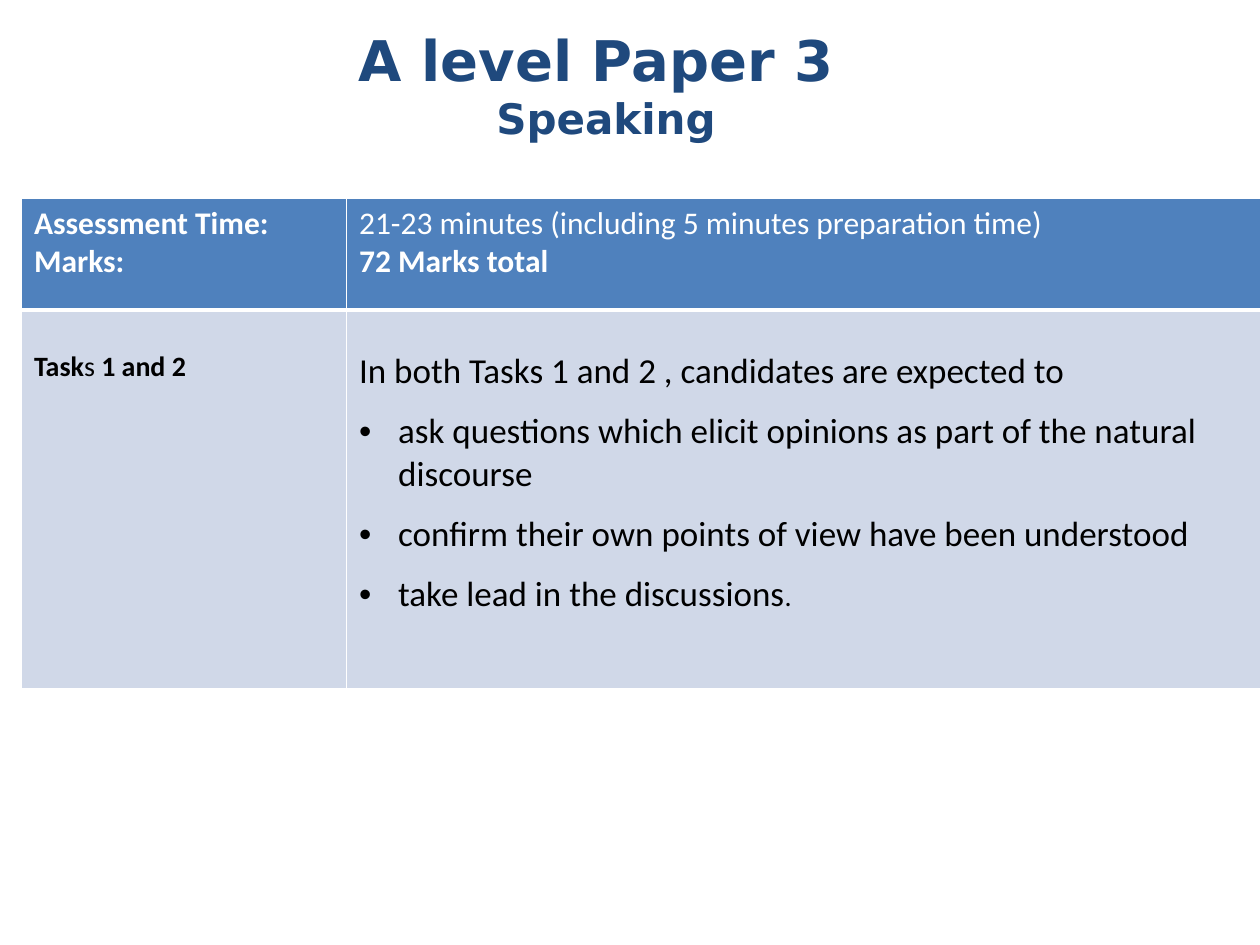
from dataclasses import dataclass

from lxml import etree
from pptx import Presentation
from pptx import util as u
from pptx.dml.color import RGBColor
from pptx.enum import text
from pptx.oxml.ns import qn


@dataclass(frozen=True)
class Theme:
    title_font: str = "DejaVu Sans"
    body_font: str = "Calibri"
    navy: str = "1F497D"
    blue: str = "4F81BD"
    pale: str = "D0D8E8"
    white: str = "FFFFFF"
    black: str = "000000"
    title_size: int = 32
    subtitle_size: int = 24
    header_size: int = 18
    task_size: int = 16
    body_size: int = 20


@dataclass(frozen=True)
class Run:
    words: str
    bold: bool | None = None
    size: int | None = None


@dataclass(frozen=True)
class Line:
    runs: tuple[Run, ...]
    size: int
    bold: bool = False
    bullet: bool = False
    space_before: float = 0


@dataclass(frozen=True)
class CellContent:
    lines: tuple[Line, ...]
    fill: str
    color: str
    margin_top: float
    bottom_border: int


THEME = Theme()
BULLET_INDENT = u.Inches(0.31)
ITEM_GAP = 9.8


def set_font(font, size: int, name: str, color: str, bold: bool) -> None:
    font.size = u.Pt(size)
    font.name = name
    font.bold = bold
    font.color.rgb = RGBColor.from_string(color)


def add_bullet(paragraph) -> None:
    properties = paragraph._p.get_or_add_pPr()
    properties.set("marL", str(BULLET_INDENT))
    properties.set("indent", str(-BULLET_INDENT))
    etree.SubElement(properties, qn("a:buFont")).set("typeface", "Arial")
    etree.SubElement(properties, qn("a:buChar")).set("char", "•")


def add_border(cell, side: str, points: int) -> None:
    border = etree.SubElement(cell._tc.get_or_add_tcPr(), qn(f"a:ln{side}"))
    border.set("w", str(u.Pt(points)))
    solid = etree.SubElement(border, qn("a:solidFill"))
    etree.SubElement(solid, qn("a:srgbClr")).set("val", THEME.white)


def write_line(paragraph, line: Line, color: str) -> None:
    if line.bullet:
        add_bullet(paragraph)
    paragraph.space_before = u.Pt(line.space_before)
    set_font(paragraph.font, line.size, THEME.body_font, color, line.bold)
    for part in line.runs:
        run = paragraph.add_run()
        run.text = part.words
        if part.bold is not None:
            run.font.bold = part.bold
        if part.size is not None:
            run.font.size = u.Pt(part.size)


def fill_cell(cell, content: CellContent) -> None:
    # Borders must precede the fill in the cell properties
    for side in "LRT":
        add_border(cell, side, 1)
    add_border(cell, "B", content.bottom_border)
    cell.fill.solid()
    cell.fill.fore_color.rgb = RGBColor.from_string(content.fill)
    cell.margin_top = u.Inches(content.margin_top)
    frame = cell.text_frame
    for index, line in enumerate(content.lines):
        paragraph = frame.add_paragraph() if index else frame.paragraphs[0]
        write_line(paragraph, line, content.color)


def header_cell(*lines: Line) -> CellContent:
    return CellContent(lines, THEME.blue, THEME.white, 0.05, 3)


def body_cell(*lines: Line) -> CellContent:
    return CellContent(lines, THEME.pale, THEME.black, 0.32, 1)


def header_line(words: str, bold: bool = True) -> Line:
    return Line((Run(words),), THEME.header_size, bold)


def bullet_line(*runs: Run) -> Line:
    return Line(runs, THEME.body_size, bullet=True, space_before=ITEM_GAP)


def add_title(slide) -> None:
    title = slide.shapes.title
    title.left, title.top = u.Inches(1.66), u.Inches(0.04)
    title.width, title.height = u.Inches(6.3), u.Inches(1.25)
    frame = title.text_frame
    frame.auto_size = text.MSO_AUTO_SIZE.NONE
    frame.vertical_anchor = text.MSO_ANCHOR.MIDDLE
    paragraph = frame.paragraphs[0]
    paragraph.alignment = text.PP_ALIGN.CENTER
    heading = paragraph.add_run()
    heading.text = "A level Paper 3 "
    set_font(heading.font, THEME.title_size, THEME.title_font, THEME.navy, True)
    paragraph.add_line_break()
    subtitle = paragraph.add_run()
    subtitle.text = "Speaking"
    set_font(subtitle.font, THEME.subtitle_size, THEME.title_font, THEME.navy, True)


def add_assessment_table(slide) -> None:
    rows = (
        (
            header_cell(header_line("Assessment Time:"), header_line("Marks:")),
            header_cell(
                header_line("21-23 minutes (including 5 minutes preparation time)", False),
                header_line("72 Marks total"),
            ),
        ),
        (
            body_cell(
                Line((Run("Task"), Run("s ", bold=False), Run("1 and 2")),
                     THEME.task_size, bold=True),
            ),
            body_cell(
                Line((Run("In both Tasks 1 and 2 , candidates are expected to"),),
                     THEME.body_size),
                bullet_line(Run("ask questions which elicit opinions as part of "
                                "the natural discourse")),
                bullet_line(Run("confirm their own points of view have been understood")),
                bullet_line(Run("take lead in the discussions"),
                            Run(".", size=THEME.task_size)),
            ),
        ),
    )
    widths, heights = (2.58, 7.35), (0.89, 3.01)
    table = slide.shapes.add_table(
        len(heights), len(widths), u.Inches(0.17), u.Inches(1.57),
        u.Inches(sum(widths)), u.Inches(sum(heights))).table
    table.first_row = table.horz_banding = False
    for column, width in zip(table.columns, widths):
        column.width = u.Inches(width)
    for row, height, contents in zip(table.rows, heights, rows):
        row.height = u.Inches(height)
        for cell, content in zip(row.cells, contents):
            fill_cell(cell, content)


def main() -> None:
    presentation = Presentation()
    presentation.slide_width = u.Inches(10)
    presentation.slide_height = u.Inches(7.5)
    slide = presentation.slides.add_slide(presentation.slide_layouts[5])
    add_title(slide)
    add_assessment_table(slide)
    presentation.save("out.pptx")


if __name__ == "__main__":
    main()
